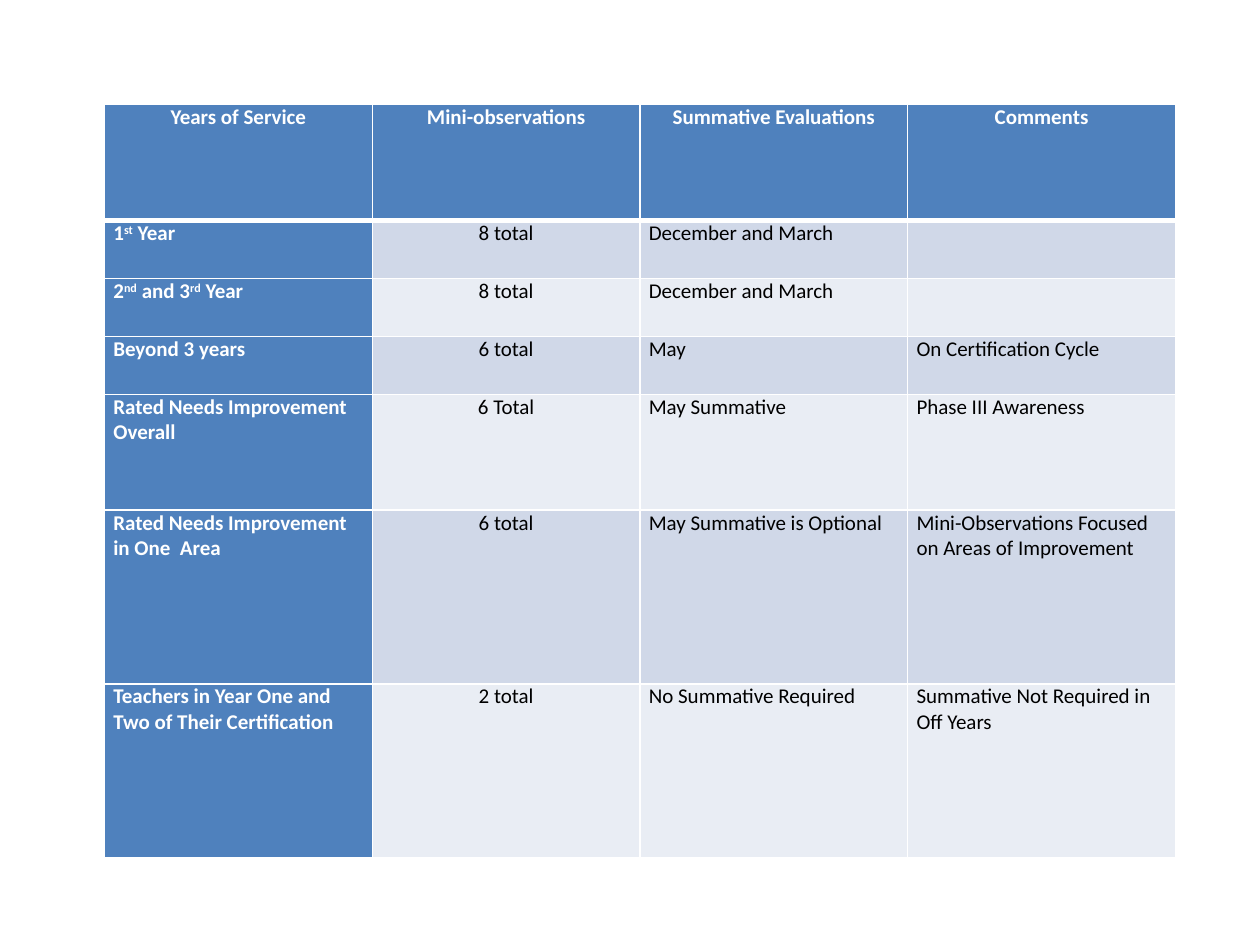
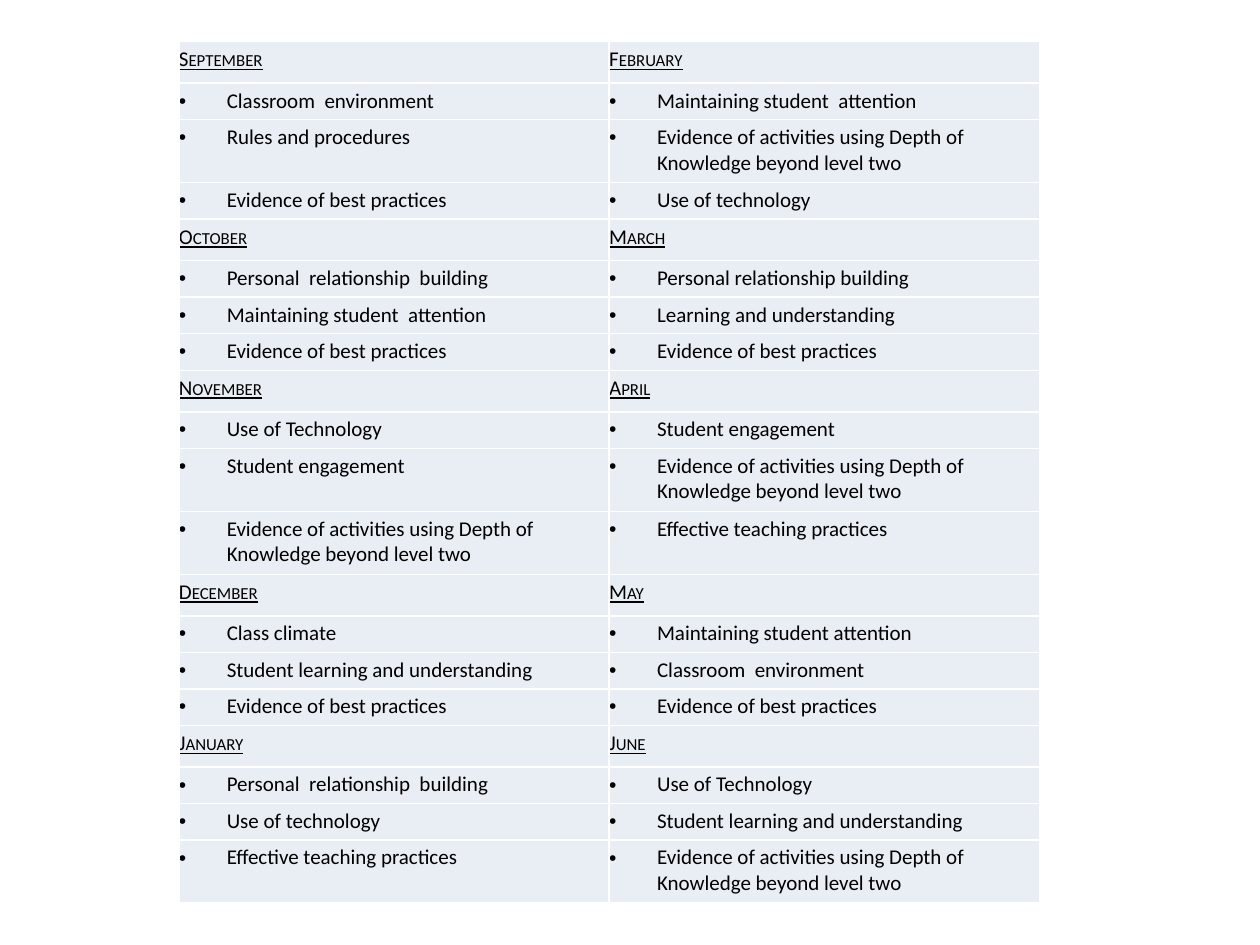
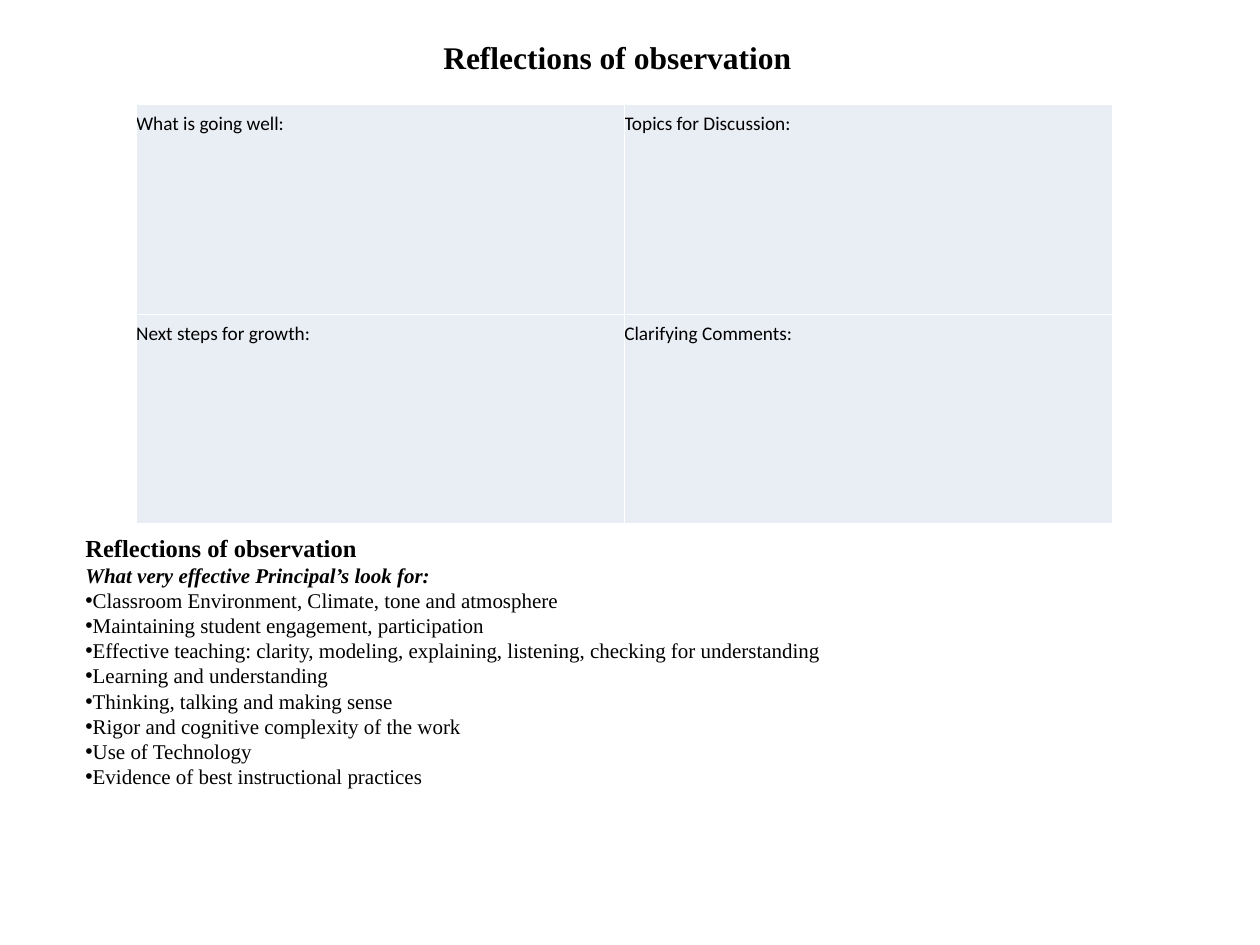
from collections import namedtuple

from lxml.etree import SubElement
from pptx import Presentation
from pptx.dml.color import RGBColor
from pptx.enum.text import MSO_ANCHOR as Anchor, MSO_AUTO_SIZE as AutoSize, PP_ALIGN as Align
from pptx.oxml import parse_xml
from pptx.oxml.ns import nsdecls, qn
from pptx.util import Inches, Pt

COLORS = {"text": "000000", "white": "FFFFFF", "header": "4F81BD", "band": "D0D8E8", "pale": "E9EDF4"}
SANS, SERIF = "Calibri", "Times New Roman"
Box = namedtuple("Box", "left top width height")

SERVICE_HEADINGS = ["Years of Service", "Mini-observations", "Summative Evaluations", "Comments"]
SERVICE_ROWS = [
    (0.46, ["1^st^ Year", "8 total", "December and March", ""]),
    (0.46, ["2^nd^ and 3^rd^ Year", "8 total", "December and March", ""]),
    (0.46, ["Beyond 3 years", "6 total", "May", "On Certification Cycle"]),
    (0.92, ["Rated Needs Improvement Overall", "6 Total", "May Summative", "Phase III Awareness"]),
    (1.38, ["Rated Needs Improvement in One  Area", "6 total", "May Summative is Optional",
            "Mini-Observations Focused on Areas of Improvement"]),
    (1.38, ["Teachers in Year One and Two of Their Certification", "2 total", "No Summative Required",
            "Summative Not Required in Off Years"]),
]

BEST_PRACTICES = "Evidence of best practices"
DEPTH = "Evidence of activities using Depth of Knowledge beyond level two"
FALL_MONTHS = {
    "September": ["Classroom  environment", "Rules and procedures", BEST_PRACTICES],
    "October": ["Personal  relationship  building", "Maintaining student  attention", BEST_PRACTICES],
    "November": ["Use of Technology", "Student engagement", DEPTH],
    "December": ["Class climate", "Student learning and understanding", BEST_PRACTICES],
    "January": ["Personal  relationship  building", "Use of technology", "Effective teaching practices"],
}
SPRING_MONTHS = {
    "February": ["Maintaining student  attention", DEPTH, "Use of technology"],
    "March": ["Personal relationship building", "Learning and understanding", BEST_PRACTICES],
    "April": ["Student engagement", DEPTH, "Effective teaching practices"],
    "May": ["Maintaining student attention", "Classroom  environment", BEST_PRACTICES],
    "June": ["Use of Technology", "Student learning and understanding", DEPTH],
}

REFLECTION_TITLE = "Reflections of observation"
REFLECTION_PROMPTS = [
    ["What is going well:", "Topics for Discussion:"],
    ["Next steps for growth:", "Clarifying Comments:"],
]
LOOK_FORS = [
    "Classroom Environment, Climate, tone and atmosphere",
    "Maintaining student engagement, participation",
    "Effective teaching: clarity, modeling, explaining, listening, checking for understanding",
    "Learning and understanding",
    "Thinking, talking and making sense",
    "Rigor and cognitive complexity of the work",
    "Use of Technology",
    "Evidence of best instructional practices",
]


def write_text(paragraph, text, size=12, font=SANS, color="text", bold=False, italic=False,
               underline=False, small_caps=False, align=Align.LEFT, bullet_indent=None):
    """Fill a paragraph, raising the parts of the text between carets."""
    paragraph.alignment = align
    if bullet_indent is not None:
        properties = paragraph._p.get_or_add_pPr()
        properties.set("marL", str(Inches(bullet_indent)))
        properties.set("indent", str(-Inches(bullet_indent)))
        SubElement(properties, qn("a:buFont"), typeface="Arial")
        SubElement(properties, qn("a:buChar"), char="•")
    for index, part in enumerate(text.split("^")):
        run = paragraph.add_run()
        run.text = part
        run.font.size, run.font.name = Pt(size), font
        run.font.bold, run.font.italic, run.font.underline = bold, italic, underline
        run.font.color.rgb = RGBColor.from_string(COLORS[color])
        if small_caps:
            run.font._element.set("cap", "small")
        if index % 2:
            run.font._element.set("baseline", "30000")


def add_grid(slide, box, row_heights, column_count):
    """Add an unstyled table with equal columns and the given row heights."""
    table = slide.shapes.add_table(len(row_heights), column_count, *map(Inches, box)).table
    table.first_row = table.horz_banding = False
    for column in table.columns:
        column.width = Inches(box.width / column_count)
    for row, height in zip(table.rows, row_heights):
        row.height = Inches(height)
    return table


def fill_cell(cell, text, fill="pale", side_margin=0, end_margin=0, bottom_line=1, **text_format):
    """Give a cell its fill, margins, white borders and text."""
    cell.fill.solid()
    cell.fill.fore_color.rgb = RGBColor.from_string(COLORS[fill])
    cell.margin_left = cell.margin_right = Inches(side_margin)
    cell.margin_top = cell.margin_bottom = Inches(end_margin)
    properties = cell._tc.get_or_add_tcPr()
    for index, (side, width) in enumerate(zip("LRTB", (1, 1, 1, bottom_line))):
        properties.insert(index, parse_xml(
            f'<a:ln{side} {nsdecls("a")} w="{Pt(width)}"><a:solidFill>'
            f'<a:srgbClr val="{COLORS["white"]}"/></a:solidFill></a:ln{side}>'))
    if text:
        write_text(cell.text_frame.paragraphs[0], text, **text_format)


def add_service_table(slide, box):
    """Show the observation requirements for each stage of service."""
    heights = [0.92] + [height for height, _ in SERVICE_ROWS]
    table = add_grid(slide, box, heights, len(SERVICE_HEADINGS))
    white_bold = {"color": "white", "bold": True}
    for column, heading in enumerate(SERVICE_HEADINGS):
        fill_cell(table.cell(0, column), heading, "header", 0.07, bottom_line=3,
                  align=Align.CENTER, **white_bold)
    for row, (_, texts) in enumerate(SERVICE_ROWS, 1):
        band = "band" if row % 2 else "pale"
        for column, text in enumerate(texts):
            text_format = white_bold if column == 0 else {}
            fill_cell(table.cell(row, column), text, "pale" if column and band == "pale" else
                      band if column else "header", 0.07,
                      align=Align.CENTER if column == 1 else Align.LEFT, **text_format)


def add_month_table(slide, box):
    """Show the focus points of each month, with fall beside spring."""
    rows = []
    for (fall, fall_points), (spring, spring_points) in zip(FALL_MONTHS.items(), SPRING_MONTHS.items()):
        rows.append((0.33, (fall, spring), {"underline": True, "small_caps": True}))
        for points in zip(fall_points, spring_points):
            rows.append((0.5 if DEPTH in points else 0.29, points, {"bullet_indent": 0.38}))
    table = add_grid(slide, box, [height for height, _, _ in rows], 2)
    for row, (_, texts, text_format) in enumerate(rows):
        for column, text in enumerate(texts):
            fill_cell(table.cell(row, column), text, end_margin=0.04, **text_format)


def add_prompt_table(slide, box):
    """Show the four reflection prompts with room to write."""
    row_count = len(REFLECTION_PROMPTS)
    table = add_grid(slide, box, [box.height / row_count] * row_count, 2)
    for row, prompts in enumerate(REFLECTION_PROMPTS):
        for column, prompt in enumerate(prompts):
            fill_cell(table.cell(row, column), prompt, end_margin=0.06, size=11)


def add_text_box(slide, box, lines, wrap=True, anchor=Anchor.TOP):
    """Add a serif text box from pairs of text and format."""
    frame = slide.shapes.add_textbox(*map(Inches, box)).text_frame
    frame.word_wrap, frame.vertical_anchor = wrap, anchor
    frame.auto_size = AutoSize.SHAPE_TO_FIT_TEXT
    for index, (text, text_format) in enumerate(lines):
        paragraph = frame.add_paragraph() if index else frame.paragraphs[0]
        write_text(paragraph, text, font=SERIF, **text_format)


def add_reflections(slide, box):
    """Place the title, prompts and list of look-fors in the box."""
    add_prompt_table(slide, Box(box.left + 0.5, box.top + 0.58, 7.75, 3.33))
    look_fors = [
        (REFLECTION_TITLE, {"size": 14, "bold": True}),
        ("What very effective Principal’s look for:", {"bold": True, "italic": True}),
    ] + [(text, {"bullet_indent": 0}) for text in LOOK_FORS]
    add_text_box(slide, Box(box.left, box.top + 3.92, box.width, 2.15), look_fors, anchor=Anchor.MIDDLE)
    add_text_box(slide, Box(box.left + 2.84, box.top, 2.99, 0.4),
                 [(REFLECTION_TITLE, {"size": 18, "bold": True})], wrap=False)


def main():
    """Build the three slides and save them."""
    presentation = Presentation()
    presentation.slide_width, presentation.slide_height = Inches(10), Inches(7.5)
    regions = [
        (add_service_table, Box(0.83, 0.83, 8.5, 6)),
        (add_month_table, Box(1.42, 0.33, 6.83, 6.83)),
        (add_reflections, Box(0.58, 0.25, 8.83, 6.07)),
    ]
    for add_region, box in regions:
        add_region(presentation.slides.add_slide(presentation.slide_layouts[6]), box)
    presentation.save("out.pptx")


if __name__ == "__main__":
    main()
